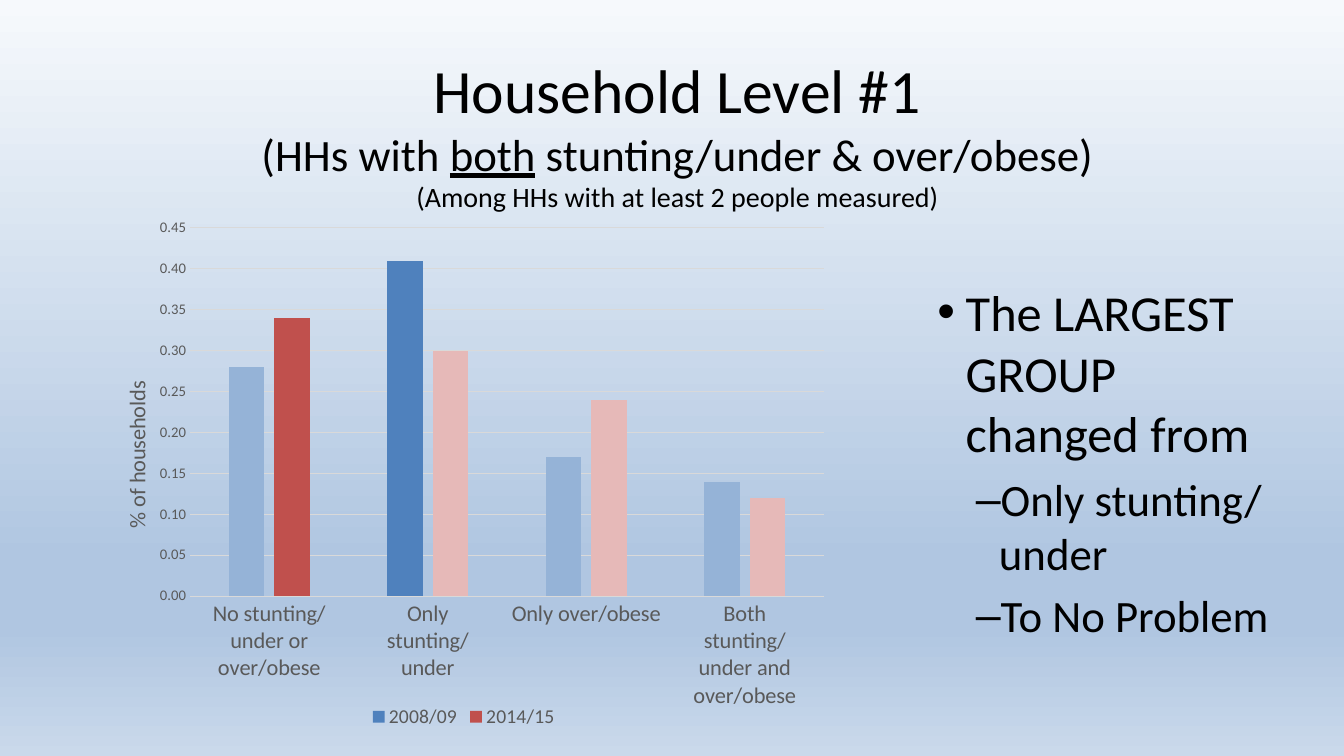
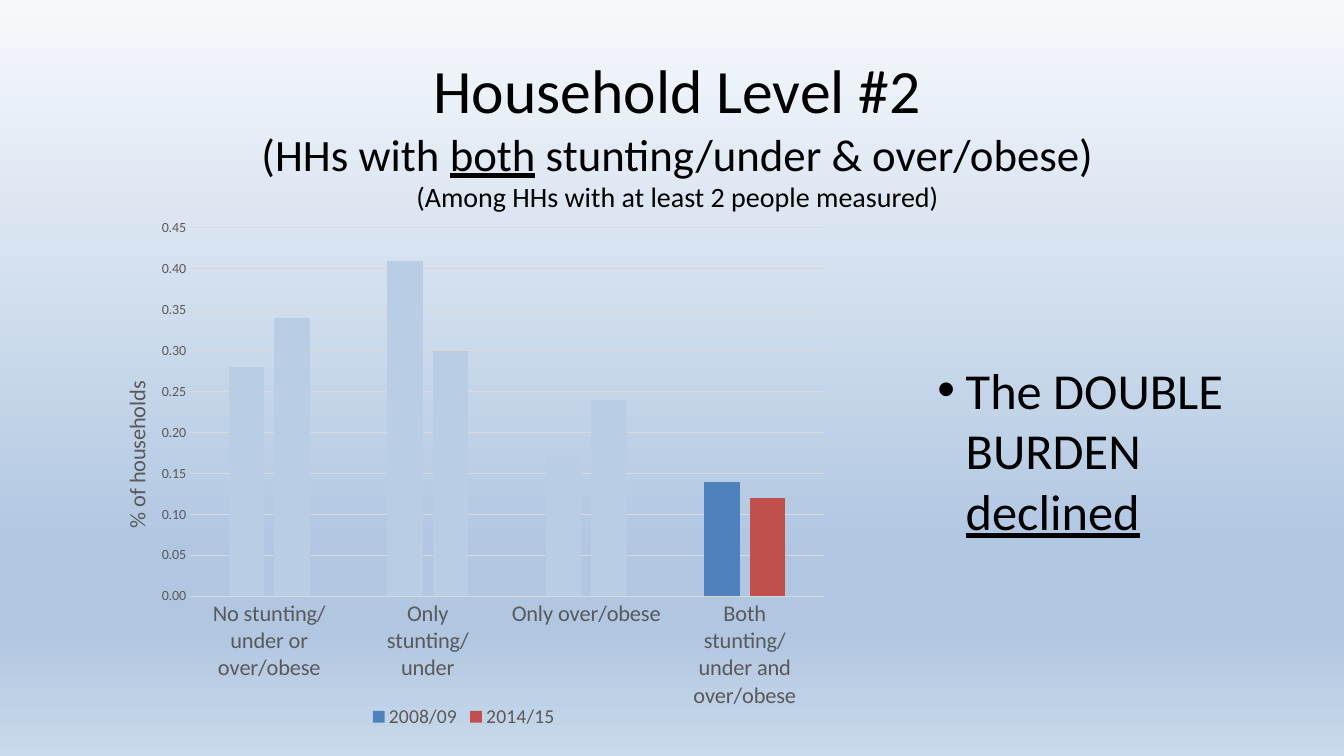
from lxml import etree
from pptx import Presentation
from pptx.chart.data import CategoryChartData as Data
from pptx.dml.color import RGBColor as Rgb
from pptx.enum.chart import XL_CHART_TYPE as Kind, XL_LEGEND_POSITION as Spot
from pptx.enum.chart import XL_TICK_MARK as Tick
from pptx.enum.text import PP_ALIGN as Align
from pptx.oxml.ns import qn
from pptx.util import Inches, Pt

FONT = "Calibri"
HUES = {"text": "000000", "label": "595959", "grid": "D9D9D9",
        "blue": "4F81BD", "red": "C0504D",
        "soft blue": "95B3D7", "soft red": "E6B9B8", "faded": "B9CDE5"}
SKY = [(0, "F6F9FC"), (74, "B0C6E1"), (83, "B0C6E1"), (100, "CAD9EB")]

HEAD_BOX = (1, 0.47, 11.44, 1.7)
PLOT_BOX = (0.87, 2.08, 7.46, 5.19)
SUBHEADS = [("(HHs with _both_ stunting/under & over/obese)", 32),
            ("(Among HHs with at least 2 people measured)", 20)]
GROUPS = ["No stunting/under or over/obese", "Only stunting/under",
          "Only over/obese", "Both stunting/under and over/obese"]
YEARS = [("2008/09", "blue", (0.28, 0.41, 0.17, 0.14)),
         ("2014/15", "red", (0.34, 0.3, 0.24, 0.12))]
# Bullet levels: sign, left margin, hanging indent, text size
LEVELS = [("•", 0.28, 0.28, 36), ("–", 0.61, 0.23, 32)]


def style(font, size, hue="text"):
    font.name, font.size, font.bold = FONT, Pt(size), False
    font.color.rgb = Rgb.from_string(HUES[hue])


def paint(fill, hue):
    fill.solid()
    fill.fore_color.rgb = Rgb.from_string(HUES[hue])


def rule(line):
    line.width = Pt(0.75)
    paint(line.fill, "grid")


def write(para, text, size):
    """Fill a paragraph; words between underscores are underlined."""
    for num, part in enumerate(text.split("_")):
        if part:
            run = para.add_run()
            run.text = part
            style(run.font, size)
            run.font.underline = num % 2 == 1


def add_box(slide, box):
    frame = slide.shapes.add_textbox(*map(Inches, box)).text_frame
    frame.word_wrap = True
    return frame


def next_para(frame, first):
    return frame.paragraphs[0] if first else frame.add_paragraph()


def add_sky(master):
    """Gradient background shared by all slides."""
    fill = master.background.fill
    fill.gradient()
    fill.gradient_angle = 270
    stops = master.element.find(".//" + qn("a:gsLst"))
    for stop in list(stops):
        stops.remove(stop)
    for pos, hue in SKY:
        stop = etree.SubElement(stops, qn("a:gs"), pos=str(pos * 1000))
        etree.SubElement(stop, qn("a:srgbClr"), val=hue)


def add_head(slide, box, title):
    frame = add_box(slide, box)
    for num, (text, size) in enumerate([(title, 44)] + SUBHEADS):
        para = next_para(frame, num == 0)
        para.alignment = Align.CENTER
        write(para, text, size)


def add_list(slide, box, items):
    frame = add_box(slide, box)
    for num, (level, text) in enumerate(items):
        sign, left, hang, size = LEVELS[level]
        para = next_para(frame, num == 0)
        if num:
            para.space_before = Pt(size * 0.2)
        props = para._p.get_or_add_pPr()
        props.set("marL", str(Inches(left)))
        props.set("indent", str(-Inches(hang)))
        etree.SubElement(props, qn("a:buFont"), typeface="Arial")
        etree.SubElement(props, qn("a:buChar"), char=sign)
        write(para, text, size)


def place(part, **sizes):
    """Fix a chart part at fractions of the chart area."""
    spot = part.find(qn("c:layout"))
    if spot is None:
        spot = etree.Element(qn("c:layout"))
        part.insert(0, spot)
    for kid in list(spot):
        spot.remove(kid)
    rules = etree.SubElement(spot, qn("c:manualLayout"))
    if "w" in sizes:
        etree.SubElement(rules, qn("c:layoutTarget"), val="inner")
    for mode in ("xMode", "yMode"):
        etree.SubElement(rules, qn("c:" + mode), val="edge")
    for key, size in sizes.items():
        etree.SubElement(rules, qn("c:" + key), val=str(size))


def add_plot(slide, box, tints, small):
    data = Data(number_format="0.00")
    data.categories = GROUPS
    for name, _, vals in YEARS:
        data.add_series(name, vals)
    chart = slide.shapes.add_chart(
        Kind.COLUMN_CLUSTERED, *map(Inches, box), data).chart
    style(chart.font, 10)
    chart.has_title = False

    # Columns
    plot = chart.plots[0]
    plot.gap_width, plot.overlap, plot.vary_by_categories = 219, -27, False
    for line, (_, hue, _), row in zip(plot.series, YEARS, tints):
        paint(line.format.fill, hue)
        for num, tint in enumerate(row):
            if tint != hue:
                paint(line.points[num].format.fill, tint)

    # Axes
    base, side = chart.category_axis, chart.value_axis
    for axis, size in ((base, 16), (side, small)):
        axis.major_tick_mark = axis.minor_tick_mark = Tick.NONE
        style(axis.tick_labels.font, size, "label")
    rule(base.format.line)
    side.format.line.fill.background()
    rule(side.major_gridlines.format.line)
    side.minimum_scale, side.maximum_scale, side.major_unit = 0, 0.45, 0.05
    side.tick_labels.number_format = "0.00"
    side.tick_labels.number_format_is_linked = False

    # Side title
    frame = side.axis_title.text_frame
    frame.text = "% of households"
    style(frame.paragraphs[0].runs[0].font, 16, "label")
    turn = side.axis_title.element.find(".//" + qn("a:bodyPr"))
    turn.set("rot", "-5400000")
    turn.set("vert", "horz")
    place(side.axis_title.element, x=0.04, y=0.32)

    # Legend and plot area
    chart.has_legend = True
    chart.legend.position = Spot.BOTTOM
    chart.legend.include_in_layout = False
    style(chart.legend.font, 14, "label")
    place(chart.element.find(".//" + qn("c:plotArea")),
          x=0.136, y=0.035, w=0.843, h=0.704)


def add_slide(deck, title, tints, small, box, items):
    slide = deck.slides.add_slide(deck.slide_layouts[6])
    add_head(slide, HEAD_BOX, title)
    add_list(slide, box, items)
    add_plot(slide, PLOT_BOX, tints, small)


def main():
    deck = Presentation()
    deck.slide_width, deck.slide_height = Inches(13.33), Inches(7.5)
    add_sky(deck.slide_master)

    # Largest group
    tints = [["soft blue", "blue", "soft blue", "soft blue"],
             ["red"] + ["soft red"] * 3]
    add_slide(deck, "Household Level #1", tints, 10.5,
              (9.2, 2.74, 3.67, 3.26),
              [(0, "The LARGEST GROUP changed from"),
               (1, "Only stunting/ under"), (1, "To No Problem")])

    # Double burden
    tints = [["faded"] * 3 + [hue] for _, hue, _ in YEARS]
    add_slide(deck, "Household Level #2", tints, 10,
              (9.2, 3.51, 3.24, 2.49),
              [(0, "The DOUBLE BURDEN _declined_")])

    deck.save("out.pptx")


if __name__ == "__main__":
    main()
